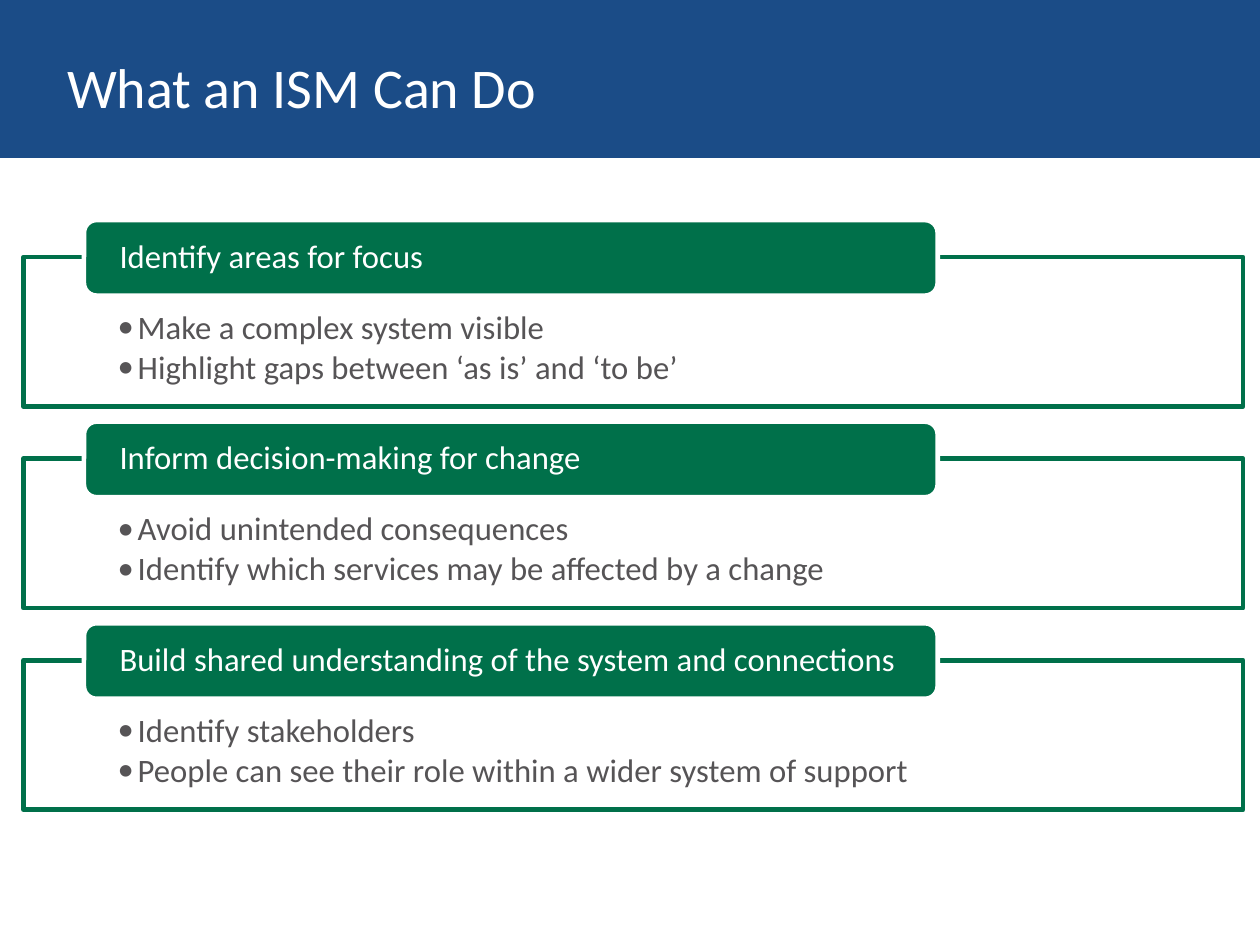
from lxml.etree import SubElement
from pptx import Presentation
from pptx.dml.color import RGBColor
from pptx.enum.shapes import MSO_SHAPE
from pptx.enum.text import MSO_ANCHOR, PP_ALIGN
from pptx.oxml.ns import qn
from pptx.util import Inches, Pt

COLORS = {"banner": "1B4C87", "green": "00704A", "white": "FFFFFF", "body": "565456"}
FONT = "Calibri"
SLIDE_WIDTH = 7.5
SLIDE_HEIGHT = SLIDE_WIDTH * 3 / 4
BENEFITS = [
    ("Identify areas for focus",
     ["Make a complex system visible", "Highlight gaps between ‘as is’ and ‘to be’"]),
    ("Inform decision-making for change",
     ["Avoid unintended consequences",
      "Identify which services may be affected by a change"]),
    ("Build shared understanding of the system and connections",
     ["Identify stakeholders",
      "People can see their role within a wider system of support"]),
]


def color(name):
    return RGBColor.from_string(COLORS[name])


def set_attributes(target, values):
    for name, value in values.items():
        setattr(target, name, value)


def add_block(slide, preset, box, fill, line=None):
    block = slide.shapes.add_shape(preset, *map(Inches, box))
    block.shadow.inherit = False
    block.fill.solid()
    block.fill.fore_color.rgb = color(fill)
    if line:
        block.line.color.rgb = color(line)
        block.line.width = Pt(2)
    else:
        block.line.fill.background()
    return block


def write(shape, lines, size, ink, anchor, margins=(0, 0, 0, 0), **spacing):
    """Fill a shape with left-aligned paragraphs; margins are left, top, right, bottom."""
    frame = shape.text_frame
    sides = ("margin_left", "margin_top", "margin_right", "margin_bottom")
    set_attributes(frame, {"word_wrap": True, "vertical_anchor": anchor,
                           **dict(zip(sides, map(Inches, margins)))})
    frame.text = "\n".join(lines)
    for paragraph in frame.paragraphs:
        set_attributes(paragraph, {"alignment": PP_ALIGN.LEFT, **spacing})
        font = paragraph.runs[0].font
        set_attributes(font, {"name": FONT, "size": Pt(size)})
        font.color.rgb = color(ink)
    return frame.paragraphs


def add_bullet(paragraph, indent):
    properties = paragraph._p.get_or_add_pPr()
    properties.set("marL", str(Inches(indent)))
    properties.set("indent", str(-Inches(indent)))
    SubElement(properties, qn("a:buFont"), typeface=FONT)
    SubElement(properties, qn("a:buChar"), char="•")


def add_banner(slide, left, top, width, height, title):
    add_block(slide, MSO_SHAPE.RECTANGLE, (left, top, width, height), "banner")
    heading = slide.shapes.add_textbox(
        Inches(left + 0.4), Inches(top + 0.33), Inches(width - 0.54), Inches(0.37))
    write(heading, [title], 24, "white", MSO_ANCHOR.MIDDLE)


def add_benefit(slide, left, top, width, height, heading, points):
    # Outlined panel with bullets
    tab_height = 0.45
    overlap = 0.22
    panel = add_block(slide, MSO_SHAPE.RECTANGLE,
                      (left, top + overlap, width, height - overlap), "white", "green")
    paragraphs = write(panel, points, 14, "body", MSO_ANCHOR.TOP,
                       (0.56, 0.32, 0.56, 0.11), line_spacing=0.9, space_after=Pt(2))
    for paragraph in paragraphs:
        add_bullet(paragraph, 0.12)

    # Heading tab over the panel's top edge
    tab = add_block(slide, MSO_SHAPE.ROUNDED_RECTANGLE,
                    (left + 0.36, top, width * 0.7, tab_height), "green", "white")
    write(tab, [heading], 14, "white", MSO_ANCHOR.MIDDLE,
          (0.19, 0, 0.19, 0), line_spacing=0.9)


def main():
    deck = Presentation()
    set_attributes(deck, {"slide_width": Inches(SLIDE_WIDTH),
                          "slide_height": Inches(SLIDE_HEIGHT)})
    slide = deck.slides.add_slide(deck.slide_layouts[6])

    add_banner(slide, 0, 0, SLIDE_WIDTH, 0.94, "What an ISM Can Do")

    # Stack of benefits at an equal pitch
    first_top, pitch = 1.31, 1.2
    for row, (heading, points) in enumerate(BENEFITS):
        add_benefit(slide, 0.14, first_top + row * pitch, 7.26, 1.11, heading, points)

    deck.save("out.pptx")


if __name__ == "__main__":
    main()
